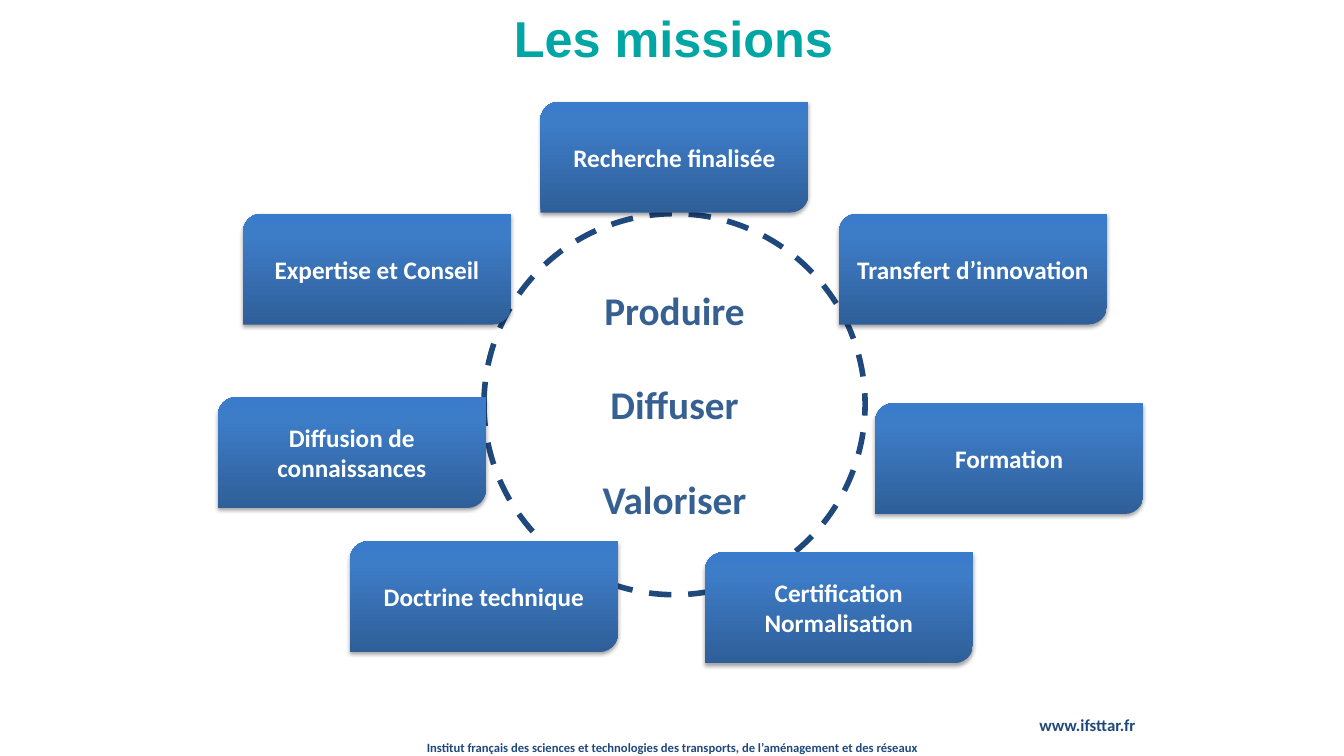
import pptx
import pptx.util
import pptx.dml.color
import pptx.enum.dml
import pptx.enum.shapes
import pptx.enum.text
import pptx.oxml.ns
import lxml.etree

Inches = pptx.util.Inches
Pt = pptx.util.Pt
RGBColor = pptx.dml.color.RGBColor
Align = pptx.enum.text.PP_ALIGN
Anchor = pptx.enum.text.MSO_ANCHOR
Shape = pptx.enum.shapes.MSO_SHAPE
qn = pptx.oxml.ns.qn

TEAL = RGBColor(0x00, 0xA6, 0xA4)
NAVY = RGBColor(0x1F, 0x49, 0x7D)
BLUE = RGBColor(0x37, 0x60, 0x92)
WHITE = RGBColor(0xFF, 0xFF, 0xFF)
BLACK = RGBColor(0x00, 0x00, 0x00)
DEEP = RGBColor(0x2F, 0x5F, 0x99)
MID = RGBColor(0x3D, 0x7C, 0xC7)
LIGHT = RGBColor(0x3A, 0x7C, 0xCB)


def write(shape, text, size, color, font="Calibri", align=Align.CENTER, gap=0):
    frame = shape.text_frame
    frame.text = text
    frame.word_wrap = True
    for row, para in enumerate(frame.paragraphs):
        para.alignment = align
        if row:
            para.space_before = Pt(gap)
        for run in para.runs:
            run.font.name = font
            run.font.size = Pt(size)
            run.font.bold = True
            run.font.color.rgb = color


def tint(parent, color, alpha=None):
    node = lxml.etree.SubElement(parent, qn("a:srgbClr"), val=str(color))
    if alpha:
        lxml.etree.SubElement(node, qn("a:alpha"), val=str(alpha * 1000))


deck = pptx.Presentation()
deck.slide_width = Inches(13.33)
deck.slide_height = Inches(7.5)
slide = deck.slides.add_slide(deck.slide_layouts[5])
shapes = slide.shapes

foot = shapes.add_textbox(Inches(0), Inches(7.29), Inches(13.33), Inches(0.25))
write(foot, "Institut français des sciences et technologies des transports, "
      "de l’aménagement et des réseaux", 9, NAVY)

site = shapes.add_textbox(Inches(10.21), Inches(7.04), Inches(1.57), Inches(0.3))
write(site, "www.ifsttar.fr", 12, NAVY, align=Align.LEFT)

title = shapes.title
title.left, title.top = Inches(2.18), Inches(0)
title.width, title.height = Inches(9), Inches(0.75)
write(title, "Les missions", 36, TEAL, "Arial")
title.text_frame.vertical_anchor = Anchor.MIDDLE

ring = shapes.add_shape(Shape.OVAL, Inches(4.8), Inches(2.12), Inches(3.78), Inches(3.78))
ring.shadow.inherit = False
ring.fill.background()
ring.line.color.rgb = NAVY
ring.line.width = Pt(4)
ring.line.dash_style = pptx.enum.dml.MSO_LINE.DASH
write(ring, "Produire\nDiffuser\nValoriser", 28, BLUE, gap=34)
ring.text_frame.vertical_anchor = Anchor.MIDDLE

tasks = [
    (5.36, 1.01, "Recherche finalisée"),
    (2.41, 2.12, "Expertise et Conseil"),
    (8.32, 2.12, "Transfert d’innovation"),
    (6.99, 5.48, "Certification\nNormalisation"),
    (3.47, 5.37, "Doctrine technique"),
    (2.16, 3.94, "Diffusion de connaissances"),
    (8.68, 4, "Formation"),
]
for left, top, text in tasks:
    card = shapes.add_shape(Shape.ROUND_2_DIAG_RECTANGLE, Inches(left), Inches(top),
                            Inches(2.66), Inches(1.1))
    card.line.fill.background()
    card.fill.gradient()
    card.fill.gradient_angle = 90
    stops = card.element.spPr.find(".//" + qn("a:gsLst"))
    for stop in list(stops):
        stops.remove(stop)
    for place, color in ((0, DEEP), (80, MID), (100, LIGHT)):
        tint(lxml.etree.SubElement(stops, qn("a:gs"), pos=str(place * 1000)), color)
    card.shadow.inherit = False
    glow = card.element.spPr.find(qn("a:effectLst"))
    shade = lxml.etree.SubElement(glow, qn("a:outerShdw"), blurRad=str(Pt(3.1)),
                                  dist=str(Pt(1.8)), dir="5400000", rotWithShape="0")
    tint(shade, BLACK, 35)
    write(card, text, 18, WHITE)
    card.text_frame.vertical_anchor = Anchor.MIDDLE

deck.save("out.pptx")
